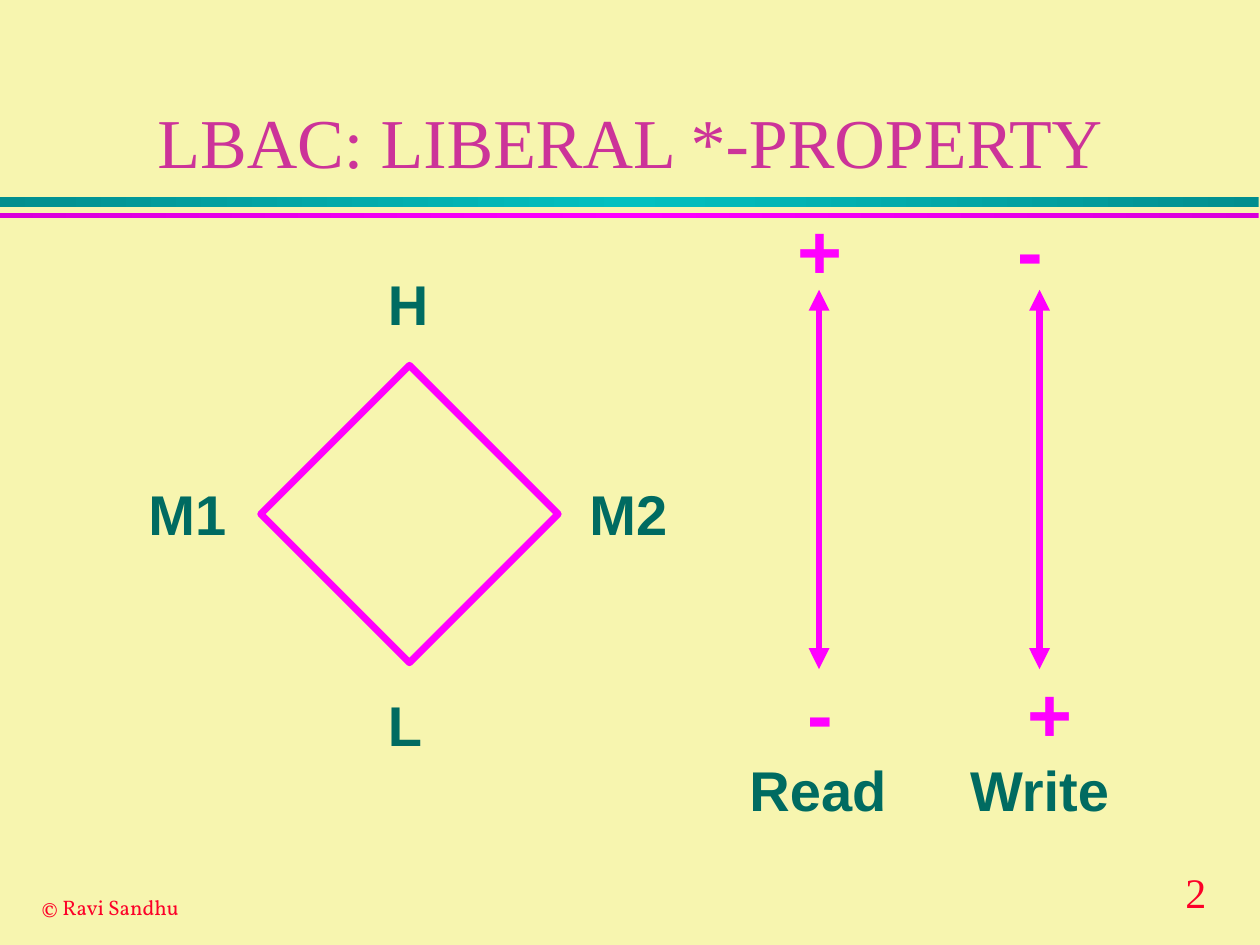
"""Build the slide on the liberal *-property of lattice-based access control."""
from copy import deepcopy
from dataclasses import dataclass
from typing import Any

from pptx import Presentation
from pptx import util as u
from pptx.dml.color import RGBColor
from pptx.enum import shapes, text
from pptx.oxml import ns
from pptx.oxml import xmlchemy as xml

COLORS = {
    "background": "F7F5AF",
    "title": "CC3399",
    "label": "006B61",
    "accent": "FF00FF",
    "footer": "FC0128",
    "teal_edge": "008E8E",
    "teal_middle": "00C0C0",
    "magenta_edge": "DA00DA",
}


def color(name):
    return RGBColor.from_string(COLORS[name])


@dataclass
class Painter:
    page: Any
    sans: str = "Arial"
    serif: str = "Times New Roman"
    footer_font: str = "Vollkorn"
    line_width: float = 4

    def background(self):
        fill = self.page.background.fill
        fill.solid()
        fill.fore_color.rgb = color("background")

    def add_span(self, para, words, size, font, tint, bold=False):
        span = para.add_run()
        span.text = words
        span.font.size = u.Pt(size)
        span.font.name = font
        span.font.bold = bold
        span.font.color.rgb = color(tint)

    def title(self, words):
        box = self.page.shapes.title
        box.left, box.top = u.Inches(0.75), u.Inches(0.25)
        box.width, box.height = u.Inches(8.5), u.Inches(1.25)
        frame = box.text_frame
        frame.vertical_anchor = text.MSO_ANCHOR.BOTTOM
        frame.auto_size = text.MSO_AUTO_SIZE.NONE
        para = frame.paragraphs[0]
        para.alignment = text.PP_ALIGN.CENTER
        self.add_span(para, words, 40, self.serif, "title")

    def label(self, words, left, top, width, height, size, font, tint, bold=False):
        box = self.page.shapes.add_textbox(
            u.Inches(left), u.Inches(top), u.Inches(width), u.Inches(height))
        frame = box.text_frame
        frame.word_wrap = False
        frame.auto_size = text.MSO_AUTO_SIZE.SHAPE_TO_FIT_TEXT
        self.add_span(frame.paragraphs[0], words, size, font, tint, bold)

    def name(self, words, left, top, width):
        self.label(words, left, top, width, 0.64, 32, self.sans, "label", True)

    def sign(self, words, left, top):
        width = {"+": 0.57, "-": 0.41}[words]
        self.label(words, left, top, width, 0.84, 44, self.sans, "accent", True)

    def shape(self, kind, left, top, width, height):
        shape = self.page.shapes.add_shape(
            kind, u.Inches(left), u.Inches(top), u.Inches(width), u.Inches(height))
        shape.shadow.inherit = False
        return shape

    def band(self, top, height, edge, middle):
        band = self.shape(shapes.MSO_SHAPE.RECTANGLE, 0, top, 9.99, height)
        band.line.fill.background()
        band.fill.gradient()
        band.fill.gradient_angle = 0
        for stop in band.fill.gradient_stops:
            stop.color.rgb = color(edge)
        stops = next(band.element.iter(ns.qn("a:gsLst")))
        stops.insert(1, deepcopy(stops[0]))
        center = band.fill.gradient_stops[1]
        center.position = 0.5
        center.color.rgb = color(middle)

    def diamond(self, left, top, side):
        diamond = self.shape(shapes.MSO_SHAPE.DIAMOND, left, top, side, side)
        diamond.fill.background()
        diamond.line.color.rgb = color("accent")
        diamond.line.width = u.Pt(self.line_width)

    def double_arrow(self, x, bottom, top):
        arrow = self.page.shapes.add_connector(
            shapes.MSO_CONNECTOR.STRAIGHT,
            u.Inches(x), u.Inches(bottom), u.Inches(x), u.Inches(top))
        arrow.line.color.rgb = color("accent")
        arrow.line.width = u.Pt(self.line_width)
        outline = next(arrow.element.iter(ns.qn("a:ln")))
        for end in ("a:headEnd", "a:tailEnd"):
            outline.append(xml.OxmlElement(end))
            outline[-1].set("type", "triangle")
        arrow.element.spPr.append(xml.OxmlElement("a:effectLst"))


def main():
    deck = Presentation()
    deck.slide_width, deck.slide_height = u.Inches(10), u.Inches(7.5)
    painter = Painter(deck.slides.add_slide(deck.slide_layouts[5]))

    painter.background()
    painter.band(1.56, 0.08, "teal_edge", "teal_middle")
    painter.band(1.69, 0.04, "magenta_edge", "accent")
    painter.label("2", 9.31, 6.83, 0.59, 0.5, 24, painter.serif, "footer")
    painter.label("© Ravi Sandhu", 0.23, 7.05, 1.31, 0.3, 12,
                  painter.footer_font, "footer")
    painter.title("LBAC: LIBERAL *-PROPERTY")

    painter.diamond(2.07, 2.9, 2.36)
    for words, left, top, width in (
        ("H", 2.98, 2.09, 0.53),
        ("L", 2.98, 5.43, 0.48),
        ("M1", 1.08, 3.76, 0.83),
        ("M2", 4.58, 3.76, 0.83),
    ):
        painter.name(words, left, top, width)

    for words, x, width, upper, lower in (
        ("Read", 6.5, 1.3, "+", "-"),
        ("Write", 8.25, 1.32, "-", "+"),
    ):
        painter.double_arrow(x, 5.31, 2.3)
        painter.name(words, x - 0.65, 5.95, width)
        painter.sign(upper, x - 0.27, 1.56)
        painter.sign(lower, x - 0.19, 5.23)

    deck.save("out.pptx")


if __name__ == "__main__":
    main()
